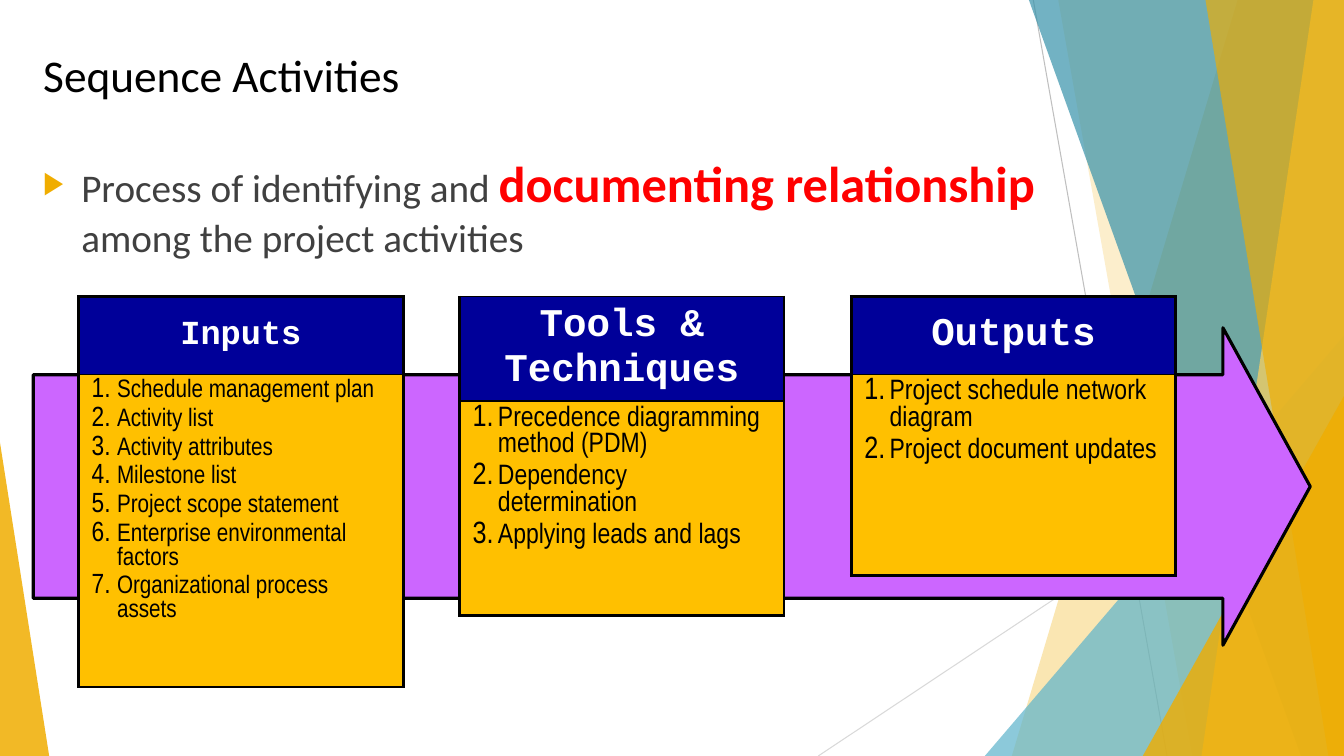
from lxml import etree
from pptx import Presentation, util as u
from pptx.dml.color import RGBColor
from pptx.enum import shapes, text
from pptx.oxml import ns

WIDTH, HEIGHT = 33.87, 19.05
COLORS = {
    "black": "000000", "white": "FFFFFF", "grey": "404040", "red": "FF0000",
    "thin": "BFBFBF", "pale": "D9D9D9", "gold": "F0AD00", "light gold": "FFD25D",
    "sky": "60B5CC", "teal": "3792AA", "violet": "CC66FF",
    "navy": "000099", "amber": "FFC000",
}
RAYS = [("thin", 26.04, 0, 29.41, HEIGHT), ("pale", WIDTH, 10.24, 20.62, HEIGHT)]
# Bands: colour, opacity %, x at the top, x at the bottom; all reach the right edge.
# Triangles: colour, opacity %, left, top, width, apex position.
DECORATION = [
    ("band", "gold", 30, 31.19, 25.5),
    ("band", "gold", 20, 26.67, 30.05),
    ("triangle", "sky", 72, 24.82, 8.46, 9.05, 1),
    ("band", "teal", 70, 25.93, 32.79),
    ("band", "light gold", 70, 33.1, 30.28),
    ("band", "gold", 65, 30.38, 33.48),
    ("triangle", "gold", 80, 28.8, 9.98, 5.07, 1),
    ("triangle", "gold", 85, 0, 11.15, 1.24, 0),
]
TITLE = "Sequence Activities"
SUMMARY = [
    ("Process of identifying and ", dict(size=28, color="grey")),
    ("documenting relationship ", dict(size=36, color="red", bold=True)),
    ("among the project activities", dict(size=28, color="grey")),
]
ARROW = (0.84, 8.26, 32.18, 8)
TABLE_TOP, TABLE_WIDTH = 7.47, 8.18
TABLES = [
    dict(left=1.98, rows=(1.96, 6.4), top_line=2.25, head="Inputs", head_size=24, size=18,
         items=["Schedule management plan", "Activity list", "Activity attributes",
                "Milestone list", "Project scope statement",
                "Enterprise environmental factors", "Organizational process assets"]),
    dict(left=11.58, rows=(2.5, 5.41), top_line=1, head="Tools & Techniques",
         head_size=28, size=20,
         items=["Precedence diagramming method (PDM)", "Dependency determination",
                "Applying leads and lags"]),
    dict(left=21.45, rows=(1.96, 5.08), top_line=2.25, head="Outputs", head_size=28, size=20,
         items=["Project schedule network diagram", "Project document updates"]),
]


def rgb(name):
    return RGBColor.from_string(COLORS[name])


def add_child(parent, tag, **attributes):
    child = etree.SubElement(parent, ns.qn(tag))
    for key, value in attributes.items():
        child.set(key, str(value))
    return child


def add_color(parent, name):
    return add_child(parent, "a:srgbClr", val=COLORS[name])


def write(para, words, *, size, color, font="Calibri", bold=False):
    span = para.add_run()
    span.text = words
    span.font.size, span.font.name, span.font.bold = u.Pt(size), font, bold
    span.font.color.rgb = rgb(color)


def set_bullet(para, indent, percent, color=None, char=None):
    """Hang the paragraph and give it a character, or a running number if none."""
    props = para._p.get_or_add_pPr()
    props.set("marL", str(u.Cm(indent)))
    props.set("indent", str(-u.Cm(indent)))
    if color:
        add_color(add_child(props, "a:buClr"), color)
    add_child(props, "a:buSzPct", val=percent * 1000)
    if char:
        add_child(props, "a:buFont", typeface="Arial")
        add_child(props, "a:buChar", char=char)
    else:
        add_child(props, "a:buFont", typeface="+mj-lt")
        add_child(props, "a:buAutoNum", type="arabicPeriod")


def paint(shape, color, opacity=100, line=None):
    shape.shadow.inherit = False
    shape.fill.solid()
    shape.fill.fore_color.rgb = rgb(color)
    if opacity < 100:
        fill = shape._element.spPr.find(ns.qn("a:solidFill"))
        add_child(fill[0], "a:alpha", val=opacity * 1000)
    if line:
        shape.line.color.rgb = rgb("black")
        shape.line.width = u.Pt(line)
    else:
        shape.line.fill.background()


def add_ray(page, color, *ends):
    ray = page.shapes.add_connector(shapes.MSO_CONNECTOR.STRAIGHT, *map(u.Cm, ends))
    ray.line.color.rgb = rgb(color)
    ray.line.width = u.Pt(0.75)
    add_child(ray._element.spPr, "a:effectLst")


def add_band(page, color, opacity, top_x, bottom_x):
    corners = [(WIDTH, 0), (WIDTH, HEIGHT), (bottom_x, HEIGHT)]
    builder = page.shapes.build_freeform(u.Cm(top_x), 0)
    builder.add_line_segments([(u.Cm(x), u.Cm(y)) for x, y in corners], close=True)
    paint(builder.convert_to_shape(), color, opacity)


def add_triangle(page, color, opacity, left, top, width, apex):
    shape = page.shapes.add_shape(shapes.MSO_SHAPE.ISOSCELES_TRIANGLE,
                                  *map(u.Cm, (left, top, width, HEIGHT - top)))
    shape.adjustments[0] = apex
    paint(shape, color, opacity)


def add_text_box(page, *bounds):
    box = page.shapes.add_textbox(*map(u.Cm, bounds))
    frame = box.text_frame
    frame.word_wrap = True
    frame.margin_top, frame.margin_right = u.Cm(0.13), u.Cm(0.5)
    return frame.paragraphs[0]


def style_cell(cell, color, top, bottom):
    """Set margins, side borders of 2.25 pt, the given top and bottom, and the fill."""
    cell.margin_left = cell.margin_right = u.Cm(0.33)
    cell.margin_top = cell.margin_bottom = u.Cm(0.13)
    props = cell._tc.get_or_add_tcPr()
    for side, width in (("L", 2.25), ("R", 2.25), ("T", top), ("B", bottom)):
        border = add_child(props, f"a:ln{side}", w=u.Pt(width))
        add_color(add_child(border, "a:solidFill"), "black")
    cell.fill.solid()
    cell.fill.fore_color.rgb = rgb(color)


def add_step(page, left, rows, top_line, head, head_size, size, items):
    bounds = (left, TABLE_TOP, TABLE_WIDTH, sum(rows))
    table = page.shapes.add_table(2, 1, *map(u.Cm, bounds)).table
    table.horz_banding = table.first_row = False
    for row, height in zip(table.rows, rows):
        row.height = u.Cm(height)
    header, body = table.cell(0, 0), table.cell(1, 0)
    style_cell(header, "navy", top_line, 1)
    style_cell(body, "amber", 1, 2.25)

    header.vertical_anchor = text.MSO_ANCHOR.MIDDLE
    para = header.text_frame.paragraphs[0]
    para.alignment = text.PP_ALIGN.CENTER
    write(para, head, size=head_size, color="white", font="Courier New", bold=True)

    frame = body.text_frame
    for index, item in enumerate(items):
        para = frame.add_paragraph() if index else frame.paragraphs[0]
        para.space_before = u.Pt(0.2 * size if index else 0)
        set_bullet(para, 0.64, 110)
        write(para, item, size=size, color="black", font="Arial Narrow")


def main():
    deck = Presentation()
    deck.slide_width, deck.slide_height = u.Cm(WIDTH), u.Cm(HEIGHT)
    page = deck.slides.add_slide(deck.slide_layouts[6])

    for ray in RAYS:
        add_ray(page, *ray)
    draw = {"band": add_band, "triangle": add_triangle}
    for kind, *details in DECORATION:
        draw[kind](page, *details)

    title = add_text_box(page, 0.84, 1.07, 28.22, 1.27)
    write(title, TITLE, size=32.4, color="black")
    summary = add_text_box(page, 0.84, 3.71, 28.22, 3.18)
    summary.space_before = u.Pt(10)
    set_bullet(summary, 0.96, 80, color="gold", char="▶")
    for words, style in SUMMARY:
        write(summary, words, **style)

    arrow = page.shapes.add_shape(shapes.MSO_SHAPE.RIGHT_ARROW, *map(u.Cm, ARROW))
    arrow.adjustments[0], arrow.adjustments[1] = 0.704, 0.275
    paint(arrow, "violet", line=2.25)
    for step in TABLES:
        add_step(page, **step)

    deck.save("out.pptx")


if __name__ == "__main__":
    main()
